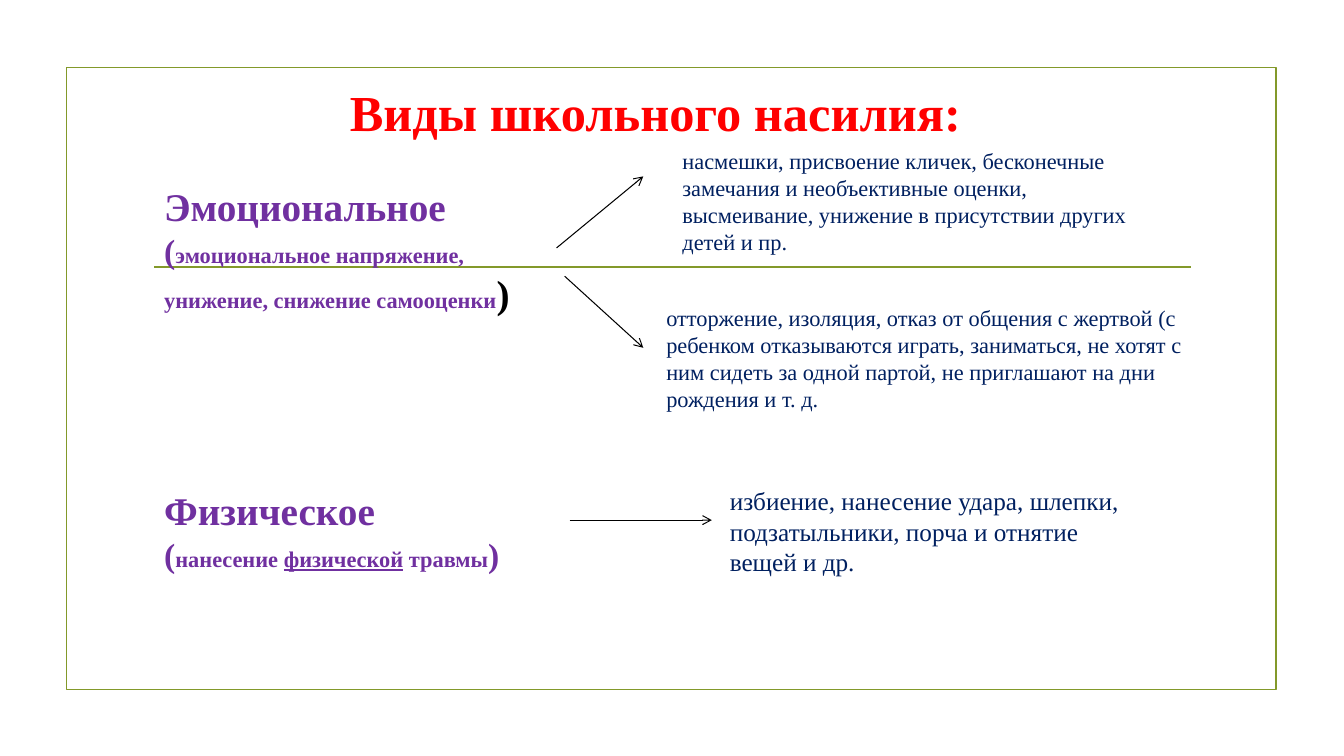
from lxml.etree import SubElement
from pptx import Presentation
from pptx.dml.color import RGBColor
from pptx.enum.shapes import MSO_CONNECTOR, MSO_SHAPE
from pptx.enum.text import MSO_ANCHOR, MSO_AUTO_SIZE, PP_ALIGN
from pptx.oxml.ns import qn
from pptx.util import Inches, Pt

FONT = "Times New Roman"
GREEN, RED, PURPLE, NAVY, BLACK = "83992A", "FF0000", "7030A0", "002060", "000000"


def rgb(value):
    """Turn a hex string into a colour."""
    return RGBColor.from_string(value)


def style(r, size, color, bold=False, underline=False):
    """Format one run."""
    r.font.name, r.font.size, r.font.bold = FONT, Pt(size), bold
    r.font.color.rgb = rgb(color)
    if underline:
        r.font.underline = True


def add_line(s, start, end, color, width, arrow=False):
    """Draw a straight line between two points, with an optional arrowhead."""
    points = [Inches(v) for v in (*start, *end)]
    line = s.shapes.add_connector(MSO_CONNECTOR.STRAIGHT, *points)
    line.line.color.rgb = rgb(color)
    line.line.width = Pt(width)
    if arrow:
        SubElement(line.line._get_or_add_ln(), qn("a:tailEnd"), type="arrow")
    SubElement(line._element.spPr, qn("a:effectLst"))


def add_frame(s, box):
    """Draw the green frame and the rule across it."""
    left, top, width, height = box
    sp = s.shapes.add_shape(MSO_SHAPE.RECTANGLE, *[Inches(v) for v in box])
    sp.shadow.inherit = False
    sp.fill.background()
    sp.line.color.rgb = rgb(GREEN)
    sp.line.width = Pt(1.25)
    y = top + 1.98
    add_line(s, (left + 0.87, y), (left + width - 0.85, y), GREEN, 1.25)


def add_title(s, box, text):
    """Move the title placeholder into its box and format it."""
    sp = s.shapes.title
    sp.left, sp.top, sp.width, sp.height = [Inches(v) for v in box]
    tf = sp.text_frame
    tf.text = text
    tf.word_wrap, tf.auto_size = False, MSO_AUTO_SIZE.NONE
    tf.vertical_anchor = MSO_ANCHOR.TOP
    p = tf.paragraphs[0]
    p.alignment = PP_ALIGN.LEFT
    style(p.runs[0], 36, RED, True)


def add_text(s, box, lines, wrap=True):
    """Place a text box whose lines are lists of (text, run style) pairs."""
    tf = s.shapes.add_textbox(*[Inches(v) for v in box]).text_frame
    tf.word_wrap = wrap
    for i, runs in enumerate(lines):
        p = tf.add_paragraph() if i else tf.paragraphs[0]
        for text, look in runs:
            r = p.add_run()
            r.text = text
            style(r, *look)


def add_kind(s, box, name, details, examples, arrows):
    """Place one kind of violence with its arrows and examples."""
    add_text(s, box, [[(name, (28, PURPLE, True))], *details], wrap=False)
    for start, end in arrows:
        add_line(s, start, end, BLACK, 0.75, arrow=True)
    for place, size, text in examples:
        add_text(s, place, [[(text, (size, NAVY))]])


def main():
    """Build the slide and save it."""
    prs = Presentation()
    prs.slide_width, prs.slide_height = Inches(13.33), Inches(7.5)
    s = prs.slides.add_slide(prs.slide_layouts[5])
    small, bracket = (16, PURPLE, True), (24, PURPLE, True)

    add_frame(s, (0.66, 0.67, 12, 6.17))
    add_title(s, (3.37, 0.75, 6.33, 0.71), "Виды школьного насилия:")
    add_kind(
        s, (1.53, 1.76, 3.68, 1.45), "Эмоциональное",
        [[("(", bracket), ("эмоциональное напряжение,", small)],
         [("унижение, снижение самооценки", small), (")", (28, BLACK, True))]],
        [((6.67, 1.41, 4.75, 1.18), 16,
          "насмешки, присвоение кличек, бесконечные замечания и необъективные "
          "оценки, высмеивание, унижение в присутствии других детей и пр."),
         ((6.51, 2.97, 5.39, 1.18), 16,
          "отторжение, изоляция, отказ от общения с жертвой (с ребенком "
          "отказываются играть, заниматься, не хотят с ним сидеть за одной "
          "партой, не приглашают на дни рождения и т. д.")],
        [((5.52, 2.46), (6.38, 1.75)), ((5.6, 2.74), (6.38, 3.45))])
    add_kind(
        s, (1.53, 4.78, 3.82, 0.98), "Физическое",
        [[("(", bracket), ("нанесение ", small), ("физической", (*small, True)),
          (" травмы", small), (")", bracket)]],
        [((7.14, 4.77, 4.14, 1.01), 18,
          "избиение, нанесение удара, шлепки, подзатыльники, порча и отнятие "
          "вещей и др.")],
        [((5.65, 5.16), (7.06, 5.16))])
    prs.save("out.pptx")


if __name__ == "__main__":
    main()
